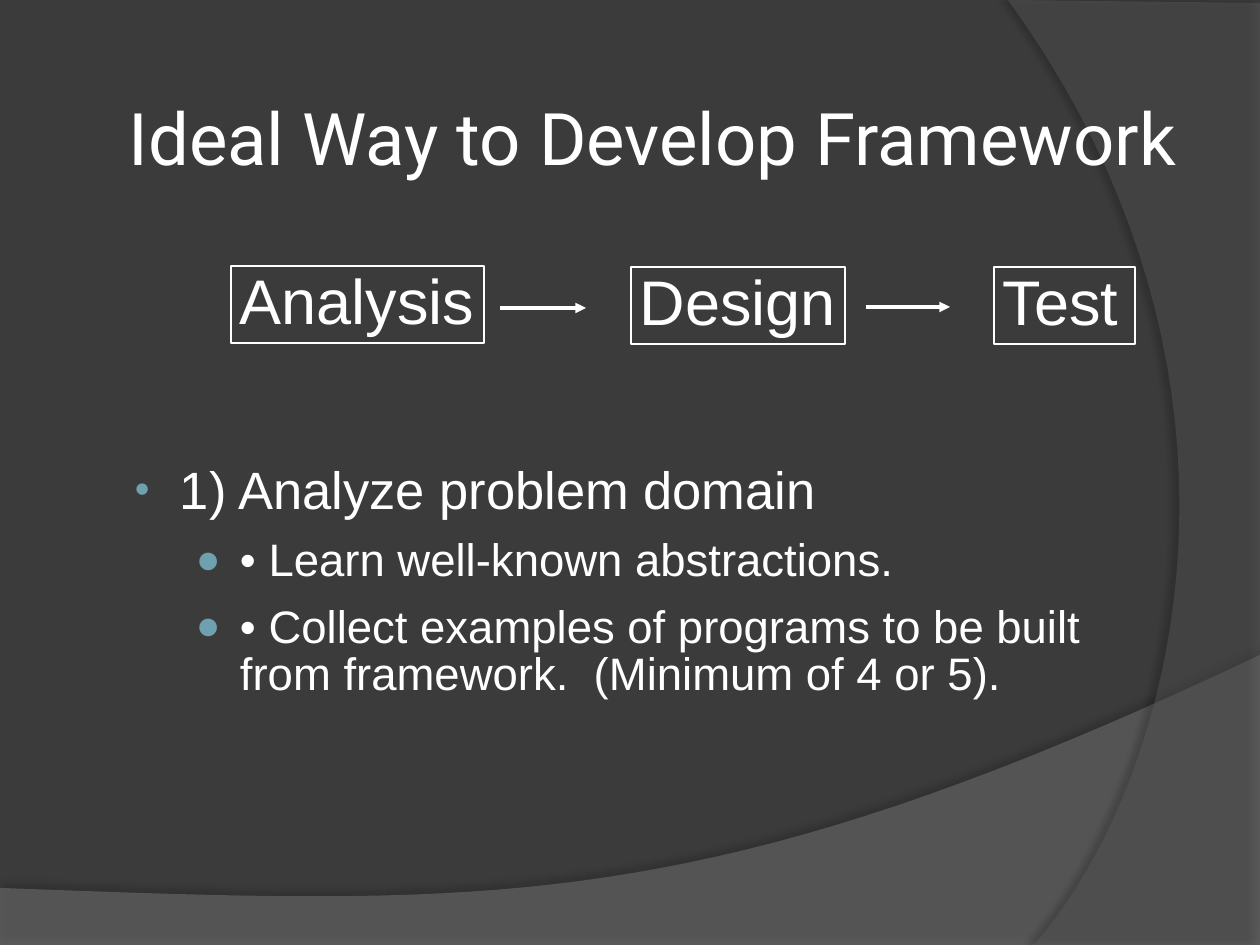
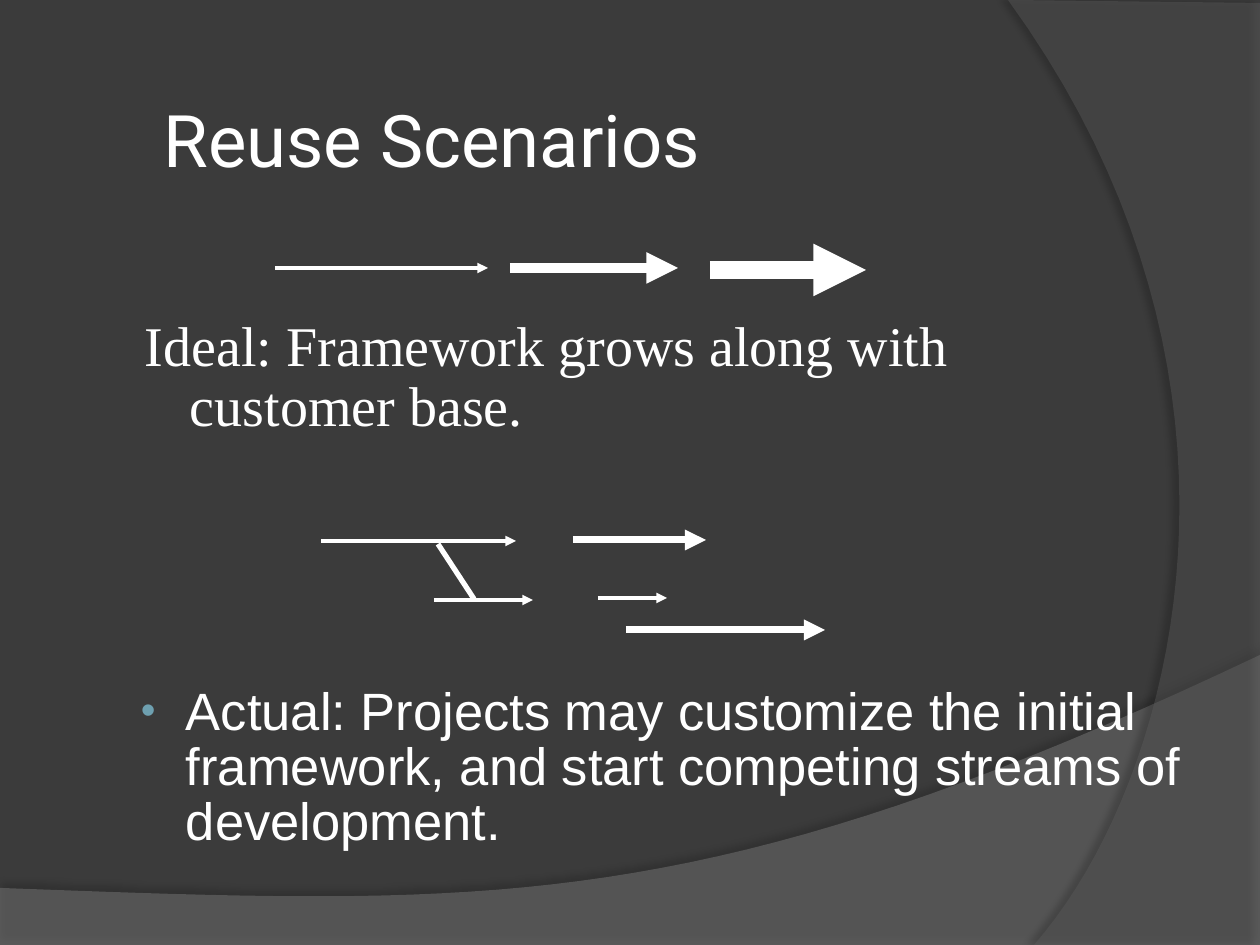
from lxml.etree import SubElement
from pptx import Presentation
from pptx.dml.color import RGBColor
from pptx.enum.shapes import MSO_CONNECTOR, MSO_SHAPE
from pptx.enum.text import MSO_ANCHOR, MSO_AUTO_SIZE, PP_ALIGN
from pptx.oxml.ns import qn
from pptx.util import Pt

PX = 7257  # EMU in one px, 126 px to the inch
WIDTH, HEIGHT = 1260, 945
BACKGROUND, WHITE, ACCENT = "3B3B3B", "FFFFFF", "6EA0B0"
TITLE_FONT, BODY_FONT, SERIF_FONT = "Roboto", "Arial", "Times New Roman"
color = RGBColor.from_string


def write(frame, text, size, font=BODY_FONT, spacing=1.0, before=0,
          margin=0, hang=0, level=0, bullet=None, bullet_size=100):
    """Add one left-aligned paragraph, using the empty first one if it is free."""
    para = frame.paragraphs[-1]
    if para.runs:
        para = frame.add_paragraph()
    para.level = level
    para.alignment = PP_ALIGN.LEFT
    para.line_spacing = spacing
    para.space_before = Pt(before)
    props = para._p.get_or_add_pPr()
    props.set("marL", str(margin * PX))
    props.set("indent", str(-hang * PX))
    if bullet:
        bullet_color = SubElement(props, qn("a:buClr"))
        SubElement(bullet_color, qn("a:srgbClr"), val=ACCENT)
        SubElement(props, qn("a:buSzPct"), val=str(bullet_size * 1000))
        SubElement(props, qn("a:buFont"), typeface=BODY_FONT)
        SubElement(props, qn("a:buChar"), char=bullet)
    span = para.add_run()
    span.text = text
    span.font.name = font
    span.font.size = Pt(size)
    span.font.color.rgb = color(WHITE)


def set_frame(frame, wrap=True):
    """Give a text frame narrow insets, top anchoring and a fixed size."""
    frame.word_wrap = wrap
    frame.auto_size = MSO_AUTO_SIZE.NONE
    frame.vertical_anchor = MSO_ANCHOR.TOP
    frame.margin_left = frame.margin_right = 9 * PX
    frame.margin_top = frame.margin_bottom = 4 * PX


deck = Presentation()
deck.slide_width, deck.slide_height = WIDTH * PX, HEIGHT * PX
layout = deck.slide_layouts[1]
fill = deck.slide_master.background.fill
fill.solid()
fill.fore_color.rgb = color(BACKGROUND)

# Titles, body areas and arrows of both slides
pages = [
    {"title": ("Ideal Way to Develop Framework", 116, 95, 1089, 84),
     "body": (126, 462, 1043, 291),
     "lines": [(500, 308, 586, 308, 2, True), (866, 307, 950, 307, 2, True)]},
    {"title": ("Reuse Scenarios", 151, 91, 825, 95),
     "body": (132, 683, 1119, 181),
     "lines": [(275, 268, 488, 268, 2, True), (510, 268, 678, 268, 6, True),
               (710, 270, 866, 270, 10, True), (321, 541, 516, 541, 2, True),
               (434, 600, 533, 600, 2, True), (573, 540, 706, 540, 4, True),
               (598, 598, 667, 598, 2, True), (626, 630, 825, 630, 4, True),
               (438, 544, 474, 599, 3, False)]},
]
for content in pages:
    page = deck.slides.add_slide(layout)
    title, body = page.shapes.title, page.placeholders[1]
    text, *title_area = content["title"]
    for holder, area in ((title, title_area), (body, content["body"])):
        holder.left, holder.top, holder.width, holder.height = [n * PX for n in area]
    title.text_frame.auto_size = MSO_AUTO_SIZE.NONE
    title.text_frame.vertical_anchor = MSO_ANCHOR.MIDDLE
    write(title.text_frame, text, 41.4, TITLE_FONT)
    set_frame(body.text_frame)
    for x1, y1, x2, y2, weight, has_head in content["lines"]:
        line = page.shapes.add_connector(
            MSO_CONNECTOR.STRAIGHT, x1 * PX, y1 * PX, x2 * PX, y2 * PX)
        line.line.color.rgb = color(WHITE)
        line.line.width = Pt(weight)
        if has_head:
            SubElement(line.line._get_or_add_ln(), qn("a:tailEnd"), type="triangle")
        SubElement(line.element.spPr, qn("a:effectLst"))
develop, reuse = deck.slides

# Curved bands on the shared layout: corners, then a Bézier curve from the last corner
bands = [
    ([(0, 888), (0, 945), (1260, 945), (1260, 655)],
     [(704, 919), (493, 906), (0, 888)], "7F7F7F", 45, 35, 270),
    ([(1260, 3), (1260, 945), (1034, 945)],
     [(1178, 780), (1283, 378), (1008, 0)], "5E5E5E", 40, 45, 180),
]
STEPS = 40
for place, (corners, curve, shade, opacity, shadow_opacity, angle) in enumerate(bands):
    controls = [corners[-1], *curve]
    outline = corners[1:]
    for step in range(1, STEPS + 1):
        t = step / STEPS
        weights = ((1 - t) ** 3, 3 * t * (1 - t) ** 2, 3 * t ** 2 * (1 - t), t ** 3)
        outline.append(tuple(sum(w * point[axis] for w, point in zip(weights, controls))
                             for axis in (0, 1)))
    # Fine local units keep the sampled curve smooth
    points = [(x * 100, y * 100) for x, y in outline]
    start_x, start_y = corners[0]
    builder = develop.shapes.build_freeform(start_x * 100, start_y * 100, scale=PX / 100)
    builder.add_line_segments(points, close=True)
    band = builder.convert_to_shape()
    band.fill.solid()
    band.fill.fore_color.rgb = color(shade)
    band.line.fill.background()
    props = band.element.spPr
    SubElement(props.find(qn("a:solidFill"))[0], qn("a:alpha"), val=str(opacity * 1000))
    effects = SubElement(props, qn("a:effectLst"))
    shadow = SubElement(effects, qn("a:outerShdw"), blurRad=str(Pt(4)), dist=str(Pt(4)),
                        dir=str(angle * 60000), algn="ctr", rotWithShape="0")
    shadow_color = SubElement(shadow, qn("a:srgbClr"), val="000000")
    SubElement(shadow_color, qn("a:alpha"), val=str(shadow_opacity * 1000))
    layout.shapes.element.insert(2 + place, band.element)

# Slide 1: development steps and the first step in detail
for step_name, left, top, width in (("Analysis", 231, 266, 253),
                                    ("Design", 631, 267, 214),
                                    ("Test", 994, 267, 141)):
    box = develop.shapes.add_shape(
        MSO_SHAPE.RECTANGLE, left * PX, top * PX, width * PX, 77 * PX)
    box.shadow.inherit = False
    box.fill.background()
    box.line.color.rgb = color(WHITE)
    box.line.width = Pt(1)
    set_frame(box.text_frame, wrap=False)
    write(box.text_frame, step_name, 36, spacing=0.9)

frame = develop.placeholders[1].text_frame
write(frame, "1) Analyze problem domain", 30, spacing=0.86, before=12,
      margin=45, hang=45, bullet="•", bullet_size=80)
for text in ("• Learn well-known abstractions.",
             "• Collect examples of programs to be built from framework.  (Minimum of 4 or 5)."):
    write(frame, text, 26, spacing=0.86, before=11,
          margin=105, hang=44, level=1, bullet="●", bullet_size=90)

# Slide 2: ideal and actual reuse
write(reuse.placeholders[1].text_frame,
      "Actual: Projects may customize the initial framework, "
      "and start competing streams of development.",
      30, spacing=0.87, before=13, margin=45, hang=45, bullet="•", bullet_size=80)
ideal = reuse.shapes.add_textbox(136 * PX, 315 * PX, 1016 * PX, 126 * PX)
set_frame(ideal.text_frame)
write(ideal.text_frame, "Ideal: Framework grows along with customer base.",
      32, SERIF_FONT, spacing=0.89, before=14, margin=45, hang=45)

deck.save("out.pptx")
